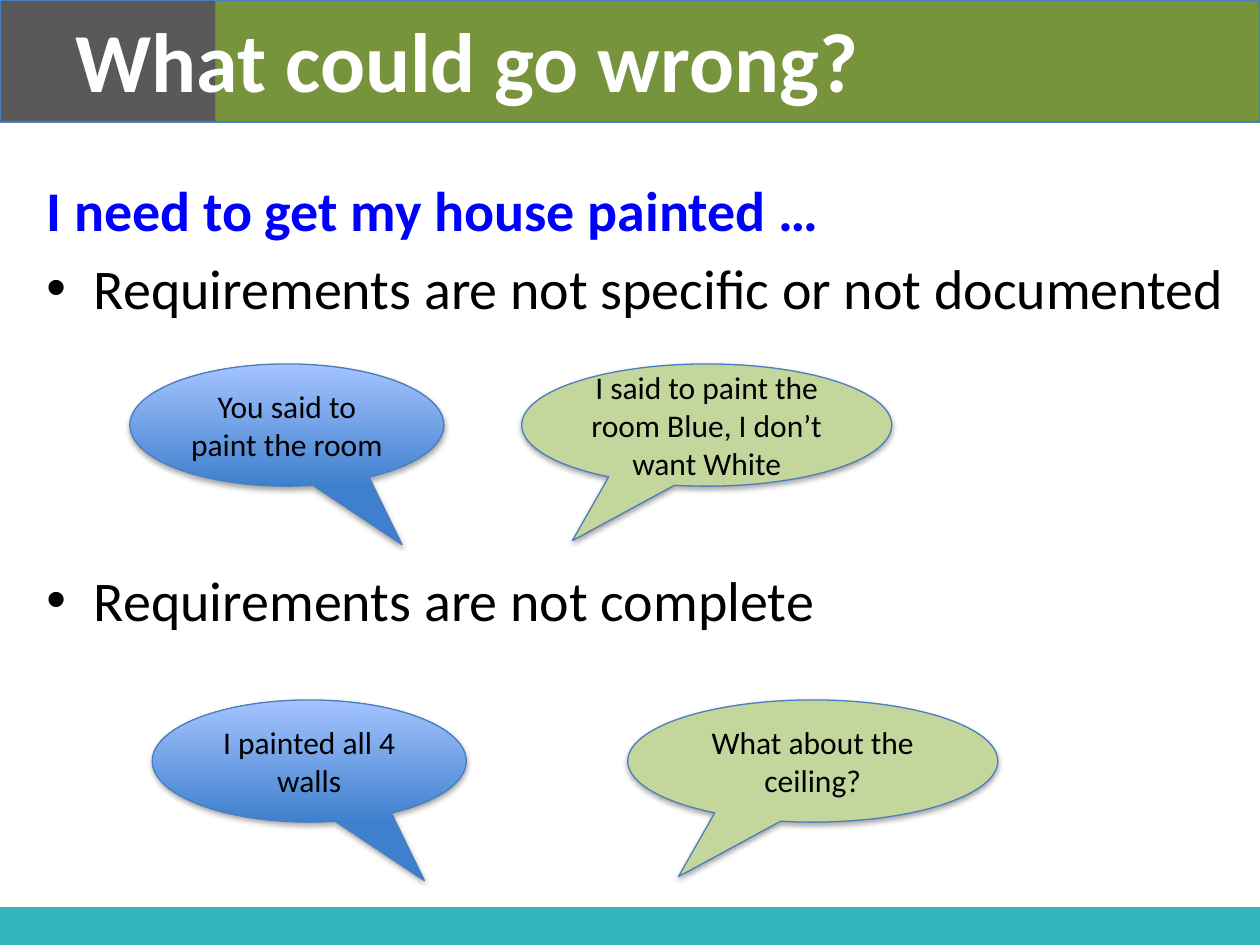
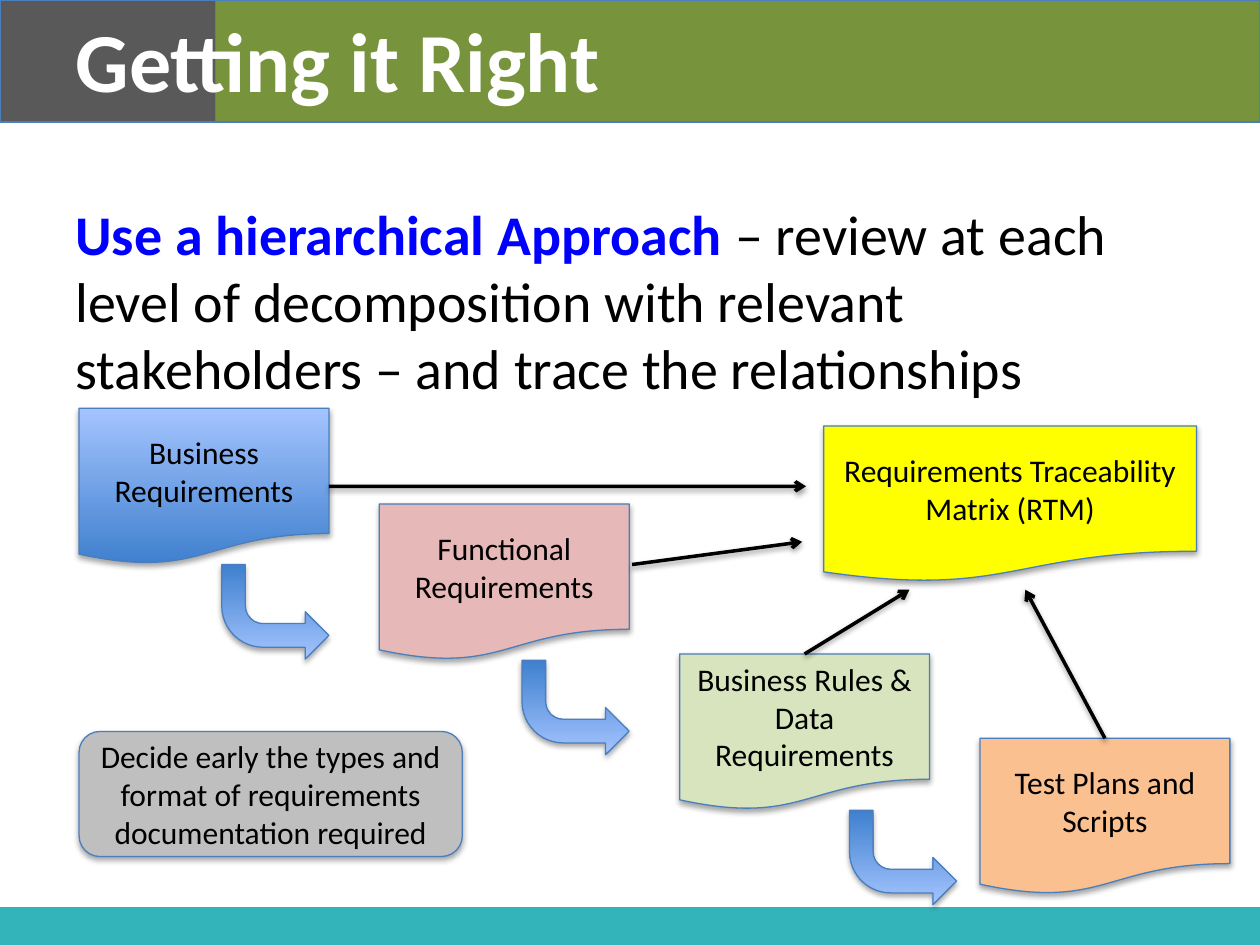
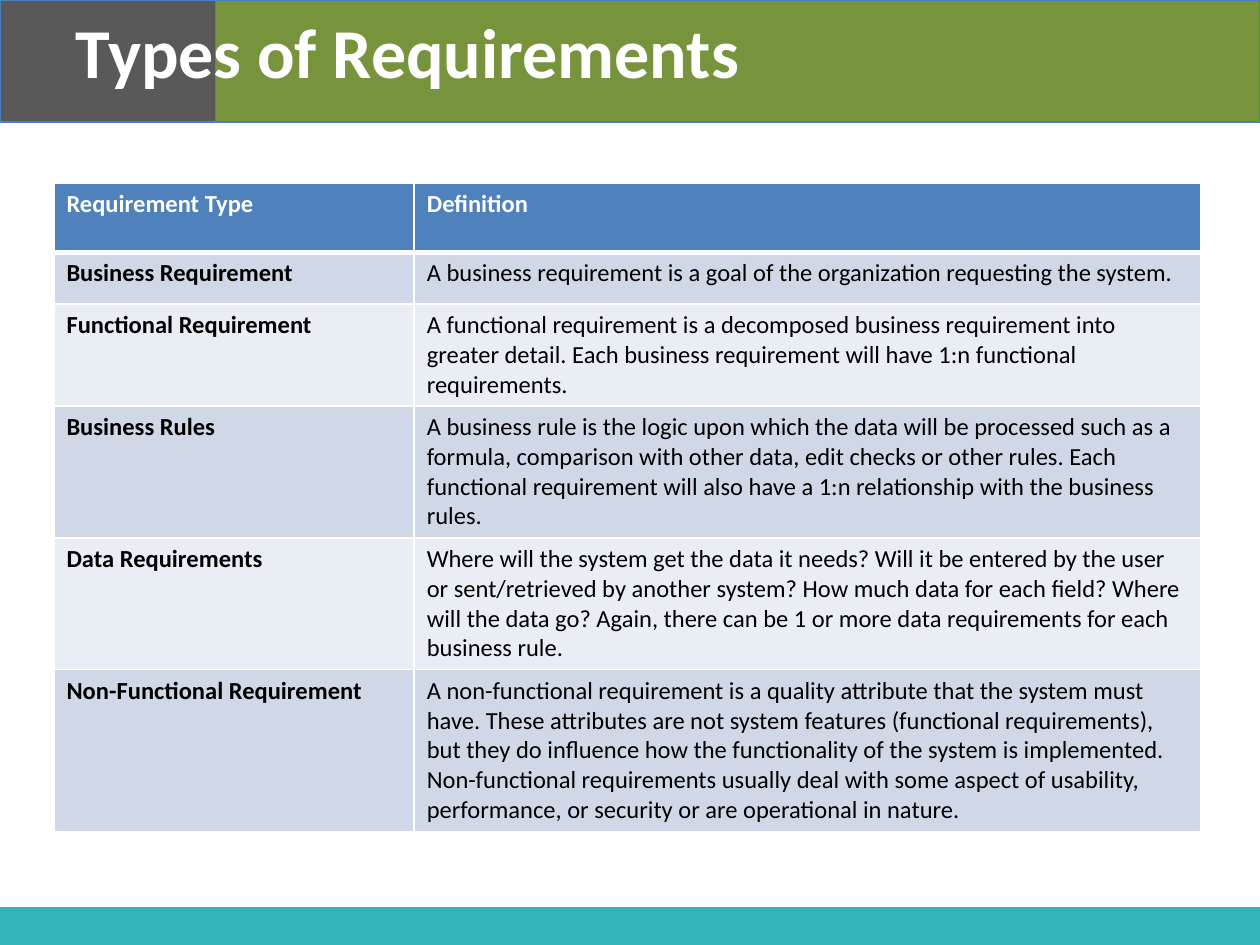
from lxml import etree
from pptx import Presentation
from pptx.dml.color import RGBColor
from pptx.enum.shapes import MSO_CONNECTOR, MSO_SHAPE
from pptx.enum.text import MSO_ANCHOR, MSO_AUTO_SIZE, PP_ALIGN
from pptx.oxml.ns import qn
from pptx.util import Pt

RECTANGLE, ROUNDED = MSO_SHAPE.RECTANGLE, MSO_SHAPE.ROUNDED_RECTANGLE
CALLOUT, BENT_ARROW = MSO_SHAPE.OVAL_CALLOUT, MSO_SHAPE.BENT_ARROW
DOCUMENT, STRAIGHT = MSO_SHAPE.FLOWCHART_DOCUMENT, MSO_CONNECTOR.STRAIGHT
CENTER, LEFT = PP_ALIGN.CENTER, PP_ALIGN.LEFT
TOP, MIDDLE = MSO_ANCHOR.TOP, MSO_ANCHOR.MIDDLE
NO_AUTOFIT = MSO_AUTO_SIZE.NONE
TITLE_ONLY = 5
TOP_SIDE, RIGHT_SIDE = 0, 3

FONT = "Calibri"
SLIDE_W, SLIDE_H = 720, 540
COLORS = {
    "black": "000000", "white": "FFFFFF", "emphasis": "0000FF",
    "outline": "4B7EBC", "gray_band": "595959", "green_band": "77933C",
    "footer": "00A0A9", "blue_dark": "3F80CE", "blue_light": "A4C4FF",
    "reply": "C3D69B", "functional": "E6B9B8", "rules": "D7E4BD",
    "tests": "FAC090", "matrix": "FFFF00", "note": "BFBFBF",
    "header": "4F81BD", "odd_row": "D0D8E8", "even_row": "E9EDF4",
}
GRADIENT = "gradient"

REQUIREMENT_TYPES = [
    ("Requirement Type", "Definition"),
    ("Business Requirement",
     "A business requirement is a goal of the organization requesting the system."),
    ("Functional Requirement",
     "A functional requirement is a decomposed business requirement into greater detail. "
     "Each business requirement will have 1:n functional requirements."),
    ("Business Rules",
     "A business rule is the logic upon which the data will be processed such as a formula, "
     "comparison with other data, edit checks or other rules. Each functional requirement "
     "will also have a 1:n relationship with the business rules."),
    ("Data Requirements",
     "Where will the system get the data it needs? Will it be entered by the user or "
     "sent/retrieved by another system? How much data for each field? Where will the data "
     "go? Again, there can be 1 or more data requirements for each business rule."),
    ("Non-Functional Requirement",
     "A non-functional requirement is a quality attribute that the system must have. These "
     "attributes are not system features (functional requirements), but they do influence "
     "how the functionality of the system is implemented. Non-functional requirements "
     "usually deal with some aspect of usability, performance, or security or are "
     "operational in nature."),
]


def rgb(color):
    return RGBColor.from_string(COLORS[color])


def points(*lengths):
    return [Pt(length) for length in lengths]


def add_xml(parent, tag, **attributes):
    return etree.SubElement(parent, qn(tag), attributes)


def style_run(run, size, color="black", bold=False):
    run.font.name = FONT
    run.font.size = Pt(size)
    run.font.bold = bold
    run.font.color.rgb = rgb(color)


def add_shadow(part, distance, alpha):
    """Give a shape or connector a soft shadow straight below it."""
    properties = part.element.spPr
    effects = properties.find(qn("a:effectLst"))
    if effects is None:
        effects = add_xml(properties, "a:effectLst")
    shadow = add_xml(effects, "a:outerShdw", blurRad=str(Pt(3.15)), dist=str(Pt(distance)),
                     dir="5400000", rotWithShape="0")
    black = add_xml(shadow, "a:srgbClr", val=COLORS["black"])
    add_xml(black, "a:alpha", val=str(alpha * 1000))


def add_filled(slide, preset, box, fill, outlined=True):
    shape = slide.shapes.add_shape(preset, *points(*box))
    shape.shadow.inherit = False
    if fill == GRADIENT:
        shape.fill.gradient()
        shape.fill.gradient_angle = 90
        for stop, color in zip(shape.fill.gradient_stops, ("blue_dark", "blue_light")):
            stop.color.rgb = rgb(color)
    else:
        shape.fill.solid()
        shape.fill.fore_color.rgb = rgb(fill)
    if outlined:
        shape.line.color.rgb = rgb("outline")
        shape.line.width = Pt(0.75)
    else:
        shape.line.fill.background()
    return shape


def add_labelled(slide, preset, box, fill, label=""):
    shape = add_filled(slide, preset, box, fill)
    add_shadow(shape, 1.8, 35)
    frame = shape.text_frame
    frame.word_wrap = True
    frame.vertical_anchor = MIDDLE
    frame.text = label
    for paragraph in frame.paragraphs:
        paragraph.alignment = CENTER
        for run in paragraph.runs:
            style_run(run, 18)
    return shape


def add_text(slide, box):
    frame = slide.shapes.add_textbox(*points(*box)).text_frame
    frame.word_wrap = True
    return frame


def add_bands(slide, layout):
    """Draw the header and footer bands, then move them to the shared layout."""
    header_h, split, footer_h = 69.84, 123.12, 21.6
    footer = add_filled(slide, RECTANGLE, (0, SLIDE_H - footer_h, SLIDE_W, footer_h),
                        "footer", outlined=False)
    add_xml(footer.element.spPr.find(".//" + qn("a:srgbClr")), "a:alpha", val="80000")
    gray = add_filled(slide, RECTANGLE, (0, 0, split, header_h), "gray_band")
    green = add_filled(slide, RECTANGLE, (split, 0, SLIDE_W - split, header_h), "green_band")
    for position, band in enumerate((footer, gray, green), start=2):
        layout.shapes.element.insert(position, band.element)


def add_titled_slide(deck, title, size=48):
    slide = deck.slides.add_slide(deck.slide_layouts[TITLE_ONLY])
    heading = slide.shapes.title
    heading.left, heading.top, heading.width, heading.height = points(36, 1.44, 463, 69)
    frame = heading.text_frame
    frame.text = title
    frame.auto_size = NO_AUTOFIT
    frame.vertical_anchor = TOP
    frame.paragraphs[0].alignment = LEFT
    style_run(frame.paragraphs[0].runs[0], size, "white", bold=True)
    return slide


def add_bullet(paragraph):
    properties = paragraph._p.get_or_add_pPr()
    properties.set("marL", str(Pt(27)))
    properties.set("indent", str(Pt(-27)))
    add_xml(properties, "a:buFont", typeface="Arial")
    add_xml(properties, "a:buChar", char="•")


def add_problems(slide, box):
    frame = add_text(slide, box)
    frame.text = ("I need to get my house painted …\n"
                  "Requirements are not specific or not documented\n"
                  "Requirements are not complete")
    lead, *problems = frame.paragraphs
    style_run(lead.runs[0], 32, "emphasis", bold=True)
    for problem, gap in zip(problems, (6.4, 140)):
        problem.space_before = Pt(gap)
        add_bullet(problem)
        style_run(problem.runs[0], 32)


def add_dialogue(slide, left, top, reply_offset, claim, reply):
    """Place a painter's claim and the owner's reply side by side."""
    for x, width, fill, label, tail in (
            (left, 179.5, GRADIENT, claim, (0.367, 0.979)),
            (left + reply_offset, 211.5, "reply", reply, (-0.363, 0.946))):
        bubble = add_labelled(slide, CALLOUT, (x, top, width, 69.84), fill, label)
        bubble.adjustments[0], bubble.adjustments[1] = tail


def add_approach(slide, box):
    paragraph = add_text(slide, box).paragraphs[0]
    for words, color, bold in (
            ("Use a hierarchical Approach ", "emphasis", True),
            ("– review at each level of decomposition with relevant stakeholders – "
             "and trace the relationships", "black", False)):
        run = paragraph.add_run()
        run.text = words
        style_run(run, 32, color, bold)


def add_trace(slide, start, end, source=None, side=None):
    trace = slide.shapes.add_connector(STRAIGHT, *points(*start, *end))
    if source is not None:
        trace.begin_connect(source, side)
    trace.line.color.rgb = rgb("black")
    trace.line.width = Pt(2)
    add_xml(trace.element.spPr.find(qn("a:ln")), "a:tailEnd", type="arrow")
    add_shadow(trace, 1.6, 38)


def add_hierarchy(slide, left, top):
    """Cascade the documents, each leading to the next and traced to the matrix."""
    step, width, height = 171.6, 142.8, 89.3
    levels = [  # label, fill, drop below the first, offset of the arrow to the next
        ("Business Requirements", GRADIENT, 0, 81.5),
        ("Functional\nRequirements", "functional", 54.7, 81.5),
        ("Business Rules &\nData Requirements", "rules", 140.4, 97),
        ("Test Plans and Scripts", "tests", 188.6, None),
    ]
    documents = []
    for index, (label, fill, drop, arrow_offset) in enumerate(levels):
        x, y = left + index * step, top + drop
        documents.append(add_labelled(slide, DOCUMENT, (x, y, width, height), fill, label))
        if arrow_offset is not None:
            arrow = add_labelled(slide, BENT_ARROW,
                                 (x + arrow_offset, y + height, 61.2, 54), GRADIENT)
            arrow.element.spPr.find(qn("a:xfrm")).set("flipV", "1")
    add_labelled(slide, DOCUMENT, (left + 425.5, top + 10.1, 213.1, height), "matrix",
                 "Requirements Traceability Matrix (RTM)")

    business, _, rules, tests = documents
    for start, end, source, side in (
            ((142.6, 44.6), (415.4, 44.6), business, RIGHT_SIDE),
            ((316, 89.3), (413.2, 76.3), None, None),
            ((414.6, 140.4), (474.5, 103.7), rules, TOP_SIDE),
            ((586.2, 188.6), (540.7, 103.7), tests, TOP_SIDE)):
        add_trace(slide, (left + start[0], top + start[1]),
                  (left + end[0], top + end[1]), source, side)


def add_borders(cell, bottom):
    properties = cell._tc.get_or_add_tcPr()
    for side, width in (("L", 1), ("R", 1), ("T", 1), ("B", bottom)):
        border = add_xml(properties, "a:ln" + side, w=str(Pt(width)))
        add_xml(add_xml(border, "a:solidFill"), "a:srgbClr", val=COLORS["white"])


def add_definitions(slide, left, top):
    widths, header_h, row_h = (205.9, 449.3), 39.6, 29.5
    height = header_h + row_h * (len(REQUIREMENT_TYPES) - 1)
    table = slide.shapes.add_table(len(REQUIREMENT_TYPES), len(widths),
                                   *points(left, top, sum(widths), height)).table
    for column, width in zip(table.columns, widths):
        column.width = Pt(width)
    for r, row in enumerate(REQUIREMENT_TYPES):
        is_header = r == 0
        table.rows[r].height = Pt(header_h if is_header else row_h)
        fill = "header" if is_header else "odd_row" if r % 2 else "even_row"
        for c, words in enumerate(row):
            cell = table.cell(r, c)
            add_borders(cell, bottom=3 if is_header else 1)
            cell.fill.solid()
            cell.fill.fore_color.rgb = rgb(fill)
            cell.text = words
            style_run(cell.text_frame.paragraphs[0].runs[0], 14,
                      "white" if is_header else "black", bold=is_header or c == 0)


def main():
    deck = Presentation()
    deck.slide_width, deck.slide_height = points(SLIDE_W, SLIDE_H)

    wrong = add_titled_slide(deck, "What could go wrong?")
    add_bands(wrong, deck.slide_layouts[TITLE_ONLY])
    add_dialogue(wrong, 74.2, 208, 223.9, "You said to paint the room",
                 "I said to paint the room Blue, I don’t want White")
    add_dialogue(wrong, 87, 400, 271.7, "I painted all 4 walls", "What about the ceiling?")
    add_problems(wrong, (19.5, 96.5, 700.5, 356))

    right = add_titled_slide(deck, "Getting it Right")
    add_approach(right, (36, 110.2, 648, 125))
    add_hierarchy(right, 45.2, 233.3)
    add_labelled(right, ROUNDED, (45.2, 418, 219, 71.5), "note",
                 "Decide early the types and format of requirements documentation required")

    types = add_titled_slide(deck, "Types of Requirements", size=40)
    add_definitions(types, 30.8, 104.5)

    deck.save("out.pptx")


if __name__ == "__main__":
    main()
